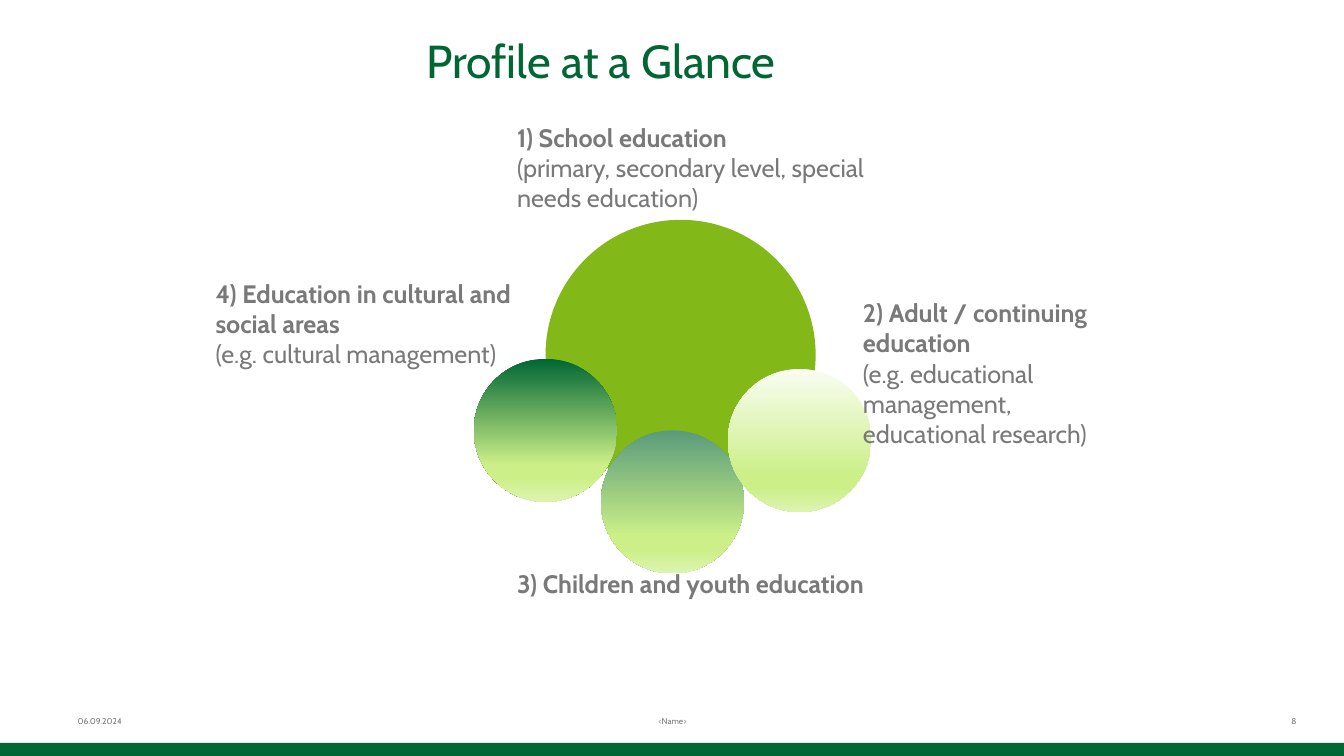
from lxml import etree
from pptx import Presentation
from pptx.dml.color import RGBColor
from pptx.enum.shapes import MSO_SHAPE as Shape
from pptx.enum.text import MSO_ANCHOR as Anchor, PP_ALIGN as Align
from pptx.oxml.ns import qn
from pptx.util import Inches, Pt

WIDTH, HEIGHT = Inches(13.33), Inches(7.5)
COLUMN, ROW = WIDTH / 100, HEIGHT / 100
FONT = "Cabin"
DARK_GREEN = RGBColor(0x00, 0x66, 0x33)
LEAF_GREEN = RGBColor(0x83, 0xB8, 0x19)
SEA_GREEN = RGBColor(0x59, 0x9B, 0x7A)
MIST = RGBColor(0xF9, 0xFD, 0xF2)
LIME = RGBColor(0xCC, 0xEF, 0x88)
PALE_LIME = RGBColor(0xDD, 0xF4, 0xB0)
GREY = RGBColor(0x79, 0x79, 0x79)

FOOTER_TOP, FOOTER_HEIGHT = 92.67, 5.33
BALL_LEFT, BALL_STEP, BALL_SIZE = 35.26, 9.45, 10.65
BALLS = [(DARK_GREEN, 47.47), (SEA_GREEN, 56.93), (MIST, 48.8)]
FIELDS = [
    ((37.73, 15.47, 28.58, 17.47), ["1) School education"],
     ["(primary, secondary level, special needs education)"]),
    ((37.73, 74.53, 28.58, 13.47), ["3) Children and youth education"], []),
    ((63.47, 38.67, 24, 25.6), ["2) Adult / continuing education"],
     ["(e.g. educational management, \neducational research)"]),
    ((15.3, 36.13, 28.58, 17.47),
     ["4) Education in cultural and", "social areas"],
     ["(e.g. cultural management)"]),
]


def add_text(slide, box, lines, size=18, color=GREY, align=Align.LEFT,
             anchor=Anchor.TOP, insets=(0.1, 0.05, 0.1, 0.05), bold_lines=0):
    """Add a text box, with its first bold_lines paragraphs in bold."""
    left, top, width, height = box
    shape = slide.shapes.add_textbox(
        int(left * COLUMN), int(top * ROW), int(width * COLUMN), int(height * ROW))
    frame = shape.text_frame
    frame.word_wrap = True
    frame.vertical_anchor = anchor
    (frame.margin_left, frame.margin_top,
     frame.margin_right, frame.margin_bottom) = map(Inches, insets)
    for index, line in enumerate(lines):
        paragraph = frame.add_paragraph() if index else frame.paragraphs[0]
        paragraph.text = line
        paragraph.alignment = align
        for run in paragraph.runs:
            run.font.name = FONT
            run.font.size = Pt(size)
            run.font.bold = index < bold_lines
            run.font.color.rgb = color


def add_plain_shape(slide, kind, left, top, width, height, color):
    """Add a filled shape without line or shadow."""
    shape = slide.shapes.add_shape(kind, int(left), int(top), int(width), int(height))
    shape.shadow.inherit = False
    shape.fill.solid()
    shape.fill.fore_color.rgb = color
    shape.line.fill.background()
    return shape


def add_circle(slide, left, top, size, color):
    """Add a circle whose diameter is given in columns."""
    return add_plain_shape(slide, Shape.OVAL, left * COLUMN, top * ROW,
                           size * COLUMN, size * COLUMN, color)


def shade_downwards(shape, color):
    """Fade a shape from the given colour at its top to pale lime."""
    shape.fill.gradient()
    gradient = shape.fill._xPr.find(qn("a:gradFill"))
    for child in list(gradient):
        gradient.remove(child)
    stops = etree.SubElement(gradient, qn("a:gsLst"))
    for percent, shade in ((0, color), (74, LIME), (83, LIME), (100, PALE_LIME)):
        stop = etree.SubElement(stops, qn("a:gs"), pos=str(percent * 1000))
        etree.SubElement(stop, qn("a:srgbClr"), val=str(shade))
    etree.SubElement(gradient, qn("a:lin"), ang="5400000", scaled="0")


def add_footer(slide):
    """Add the date, name, slide number and green base bar."""
    parts = [
        ("<Name>", 34.21, 31.66, Align.CENTER, (0.07, 0.04, 0.07, 0.04)),
        ("06.09.2024", 5.03, 23.33, Align.LEFT, (0.1, 0.05, 0.1, 0.05)),
        ("8", 73.14, 23.33, Align.RIGHT, (0.1, 0.05, 0, 0.05)),
    ]
    for text, left, width, align, insets in parts:
        add_text(slide, (left, FOOTER_TOP, width, FOOTER_HEIGHT), [text], size=6,
                 align=align, anchor=Anchor.MIDDLE, insets=insets)
    add_plain_shape(slide, Shape.RECTANGLE, 0, 98.27 * ROW, WIDTH, 1.73 * ROW,
                    DARK_GREEN)


def main():
    """Build the profile slide and save it."""
    presentation = Presentation()
    presentation.slide_width, presentation.slide_height = WIDTH, HEIGHT
    slide = presentation.slides.add_slide(presentation.slide_layouts[6])
    add_footer(slide)
    add_text(slide, (15.6, 4.27, 58.21, 16.67), ["Profile at a Glance"], size=33,
             color=DARK_GREEN, align=Align.CENTER, insets=(0.1, 0, 0.1, 0.05))
    add_circle(slide, 40.59, 29.07, 20.1, LEAF_GREEN)
    for index, (color, top) in enumerate(BALLS):
        ball = add_circle(slide, BALL_LEFT + index * BALL_STEP, top, BALL_SIZE, color)
        shade_downwards(ball, color)
    for box, heading, details in FIELDS:
        add_text(slide, box, heading + details, bold_lines=len(heading))
    presentation.save("out.pptx")


if __name__ == "__main__":
    main()
